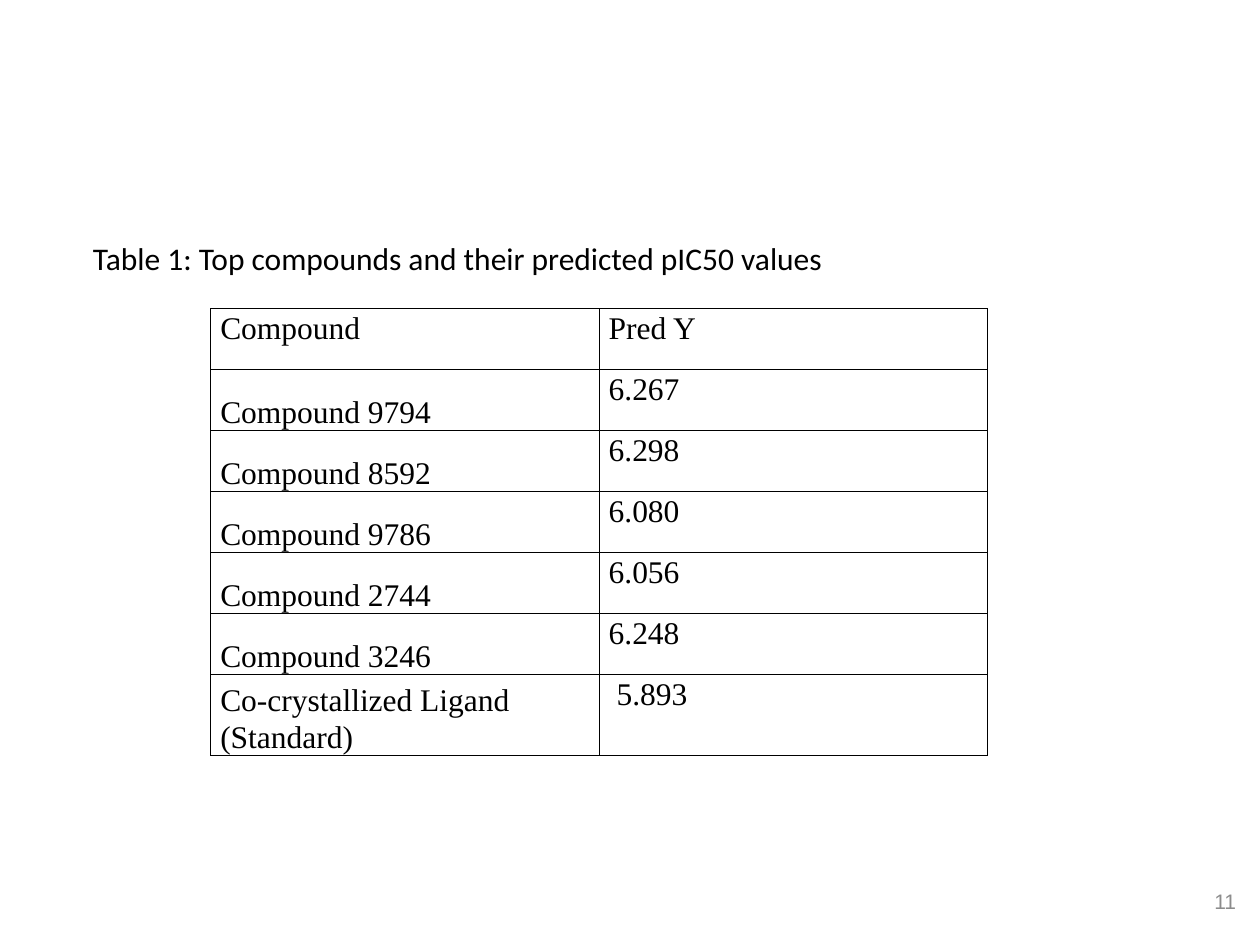
from dataclasses import dataclass

from lxml.etree import SubElement
from pptx import Presentation
from pptx.dml.color import RGBColor
from pptx.enum.text import MSO_ANCHOR, MSO_AUTO_SIZE, PP_ALIGN
from pptx.oxml.ns import qn
from pptx.util import Cm, Pt


@dataclass(frozen=True)
class Theme:
    ink: RGBColor = RGBColor(0x00, 0x00, 0x00)
    muted: RGBColor = RGBColor(0x8C, 0x8C, 0x8C)
    caption_font: str = "Calibri"
    table_font: str = "Times New Roman"
    number_font: str = "Arial"
    body_size: Pt = Pt(18)
    number_size: Pt = Pt(12)
    border: Pt = Pt(0.5)


THEME = Theme()

ROWS = [
    ("Compound ", "Pred Y"),
    ("Compound 9794", "6.267"),
    ("Compound 8592", "6.298"),
    ("Compound 9786", "6.080"),
    ("Compound 2744", "6.056"),
    ("Compound 3246", "6.248"),
    ("Co-crystallized Ligand (Standard)", " 5.893"),
]


def style_paragraph(p, font, size, color, align):
    p.alignment = align
    p.font.name = font
    p.font.size = size
    p.font.color.rgb = color


def add_borders(cell):
    tcPr = cell._tc.get_or_add_tcPr()
    for i, side in enumerate(("lnL", "lnR", "lnT", "lnB")):
        ln = SubElement(tcPr, qn(f"a:{side}"), w=str(THEME.border))
        fill = SubElement(ln, qn("a:solidFill"))
        SubElement(fill, qn("a:srgbClr"), val=str(THEME.ink))
        # Borders must precede the cell fill
        tcPr.remove(ln)
        tcPr.insert(i, ln)


def add_caption(s, left, top, width, height):
    sp = s.shapes.title
    sp.left, sp.top, sp.width, sp.height = left, top, width, height
    tf = sp.text_frame
    tf.text = "Table 1: Top compounds and their predicted pIC50 values"
    tf.word_wrap = True
    tf.auto_size = MSO_AUTO_SIZE.NONE
    tf.vertical_anchor = MSO_ANCHOR.TOP
    style_paragraph(tf.paragraphs[0], THEME.caption_font, THEME.body_size,
                    THEME.ink, PP_ALIGN.LEFT)


def add_compound_table(s, left, top, width, height):
    last_height = Cm(1.63)
    row_height = (height - last_height) // (len(ROWS) - 1)
    table = s.shapes.add_table(len(ROWS), 2, left, top, width, height).table
    table.horz_banding = False
    for i, values in enumerate(ROWS):
        is_last = i == len(ROWS) - 1
        table.rows[i].height = last_height if is_last else row_height
        for j, value in enumerate(values):
            cell = table.cell(i, j)
            is_name = i > 0 and j == 0
            cell.text = value
            cell.margin_left = cell.margin_right = Cm(0.19)
            cell.margin_top = cell.margin_bottom = 0
            cell.vertical_anchor = MSO_ANCHOR.BOTTOM if is_name else MSO_ANCHOR.TOP
            cell.fill.background()
            add_borders(cell)
            p = cell.text_frame.paragraphs[0]
            style_paragraph(p, THEME.table_font, THEME.body_size, THEME.ink,
                            PP_ALIGN.LEFT if is_name else PP_ALIGN.JUSTIFY)
            p.font.bold = False
            p.line_spacing = 1.07


def add_page_number(s, left, top, width, height):
    tf = s.shapes.add_textbox(left, top, width, height).text_frame
    tf.text = "11"
    tf.word_wrap = True
    tf.vertical_anchor = MSO_ANCHOR.MIDDLE
    style_paragraph(tf.paragraphs[0], THEME.number_font, THEME.number_size,
                    THEME.muted, PP_ALIGN.RIGHT)


def main():
    prs = Presentation()
    prs.slide_width, prs.slide_height = Cm(25.4), Cm(19.05)
    s = prs.slides.add_slide(prs.slide_layouts[5])  # Title Only
    add_page_number(s, Cm(19.25), Cm(17.65), Cm(5.92), Cm(1.02))
    add_compound_table(s, Cm(4.25), Cm(6.22), Cm(15.66), Cm(9.01))
    add_caption(s, Cm(1.62), Cm(4.7), Cm(20.2), Cm(1.02))
    prs.save("out.pptx")


if __name__ == "__main__":
    main()
